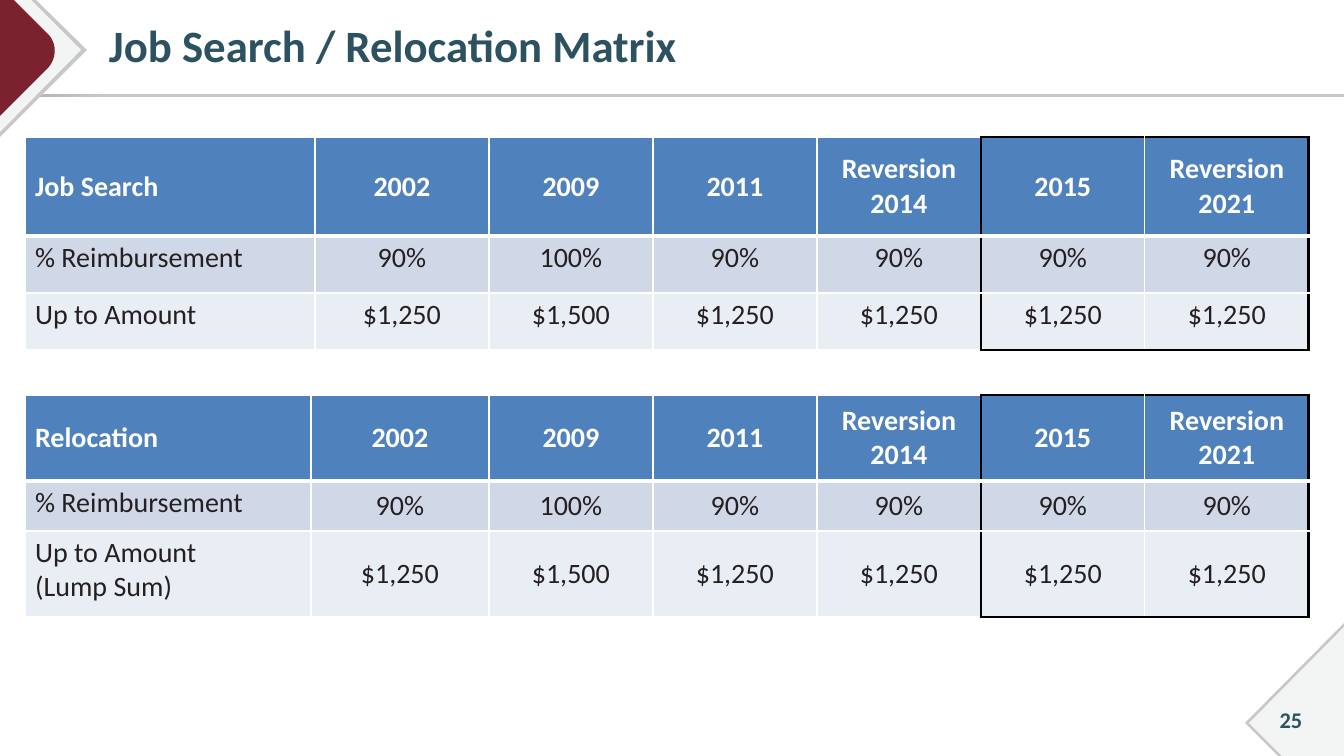
"""Build the job search and relocation matrix slide."""
from lxml import etree
from pptx import Presentation
from pptx.dml.color import RGBColor
from pptx.enum.shapes import MSO_SHAPE
from pptx.enum.text import MSO_ANCHOR, PP_ALIGN
from pptx.oxml.ns import qn
from pptx.util import Pt

PX = 12192000 / 1344
SLIDE_SIZE = (1344, 756)
FONT = "Calibri"
RECTANGLE = MSO_SHAPE.RECTANGLE
TOP, MIDDLE = MSO_ANCHOR.TOP, MSO_ANCHOR.MIDDLE
LEFT, CENTER = PP_ALIGN.LEFT, PP_ALIGN.CENTER

TEAL = RGBColor(0x2C, 0x52, 0x61)
MAROON = RGBColor(0x7A, 0x23, 0x2F)
GRAY = RGBColor(0xC8, 0xC8, 0xC6)
DARK_GRAY = RGBColor(0xAB, 0xAB, 0xA8)
PALE = RGBColor(0xF3, 0xF4, 0xF4)
WHITE = RGBColor(0xFF, 0xFF, 0xFF)
BLACK = RGBColor(0x00, 0x00, 0x00)
INK = RGBColor(0x24, 0x20, 0x21)
ROW_FILLS = (
    RGBColor(0x4F, 0x81, 0xBD),
    RGBColor(0xD0, 0xD8, 0xE8),
    RGBColor(0xE9, 0xED, 0xF4),
)

YEARS = ["2002", "2009", "2011", "Reversion 2014", "2015", "Reversion 2021"]
PERCENTS = ["90%", "100%"] + ["90%"] * 4
AMOUNTS = ["$1,250", "$1,500"] + ["$1,250"] * 4
YEAR_WIDTHS = [164] * 5
FRAME_START = 5
LAST_COLUMN, LAST_ROW = 6, 2


def px(*lengths):
    """Turn pixel lengths into EMU."""
    return [round(length * PX) for length in lengths]


def curve(start, control_1, control_2, end, steps=12):
    """Return points along a cubic curve."""
    points = []
    for step in range(steps + 1):
        t = step / steps
        weights = ((1 - t) ** 3, 3 * t * (1 - t) ** 2, 3 * t * t * (1 - t), t ** 3)
        corners = (start, control_1, control_2, end)
        points.append(tuple(
            sum(weight * corner[axis] for weight, corner in zip(weights, corners))
            for axis in (0, 1)
        ))
    return points


def add_polygon(slide, points, color):
    """Draw a filled outline through pixel points."""
    first, *others = [px(*point) for point in points]
    builder = slide.shapes.build_freeform(*first, scale=1.0)
    builder.add_line_segments(others, close=True)
    shape = builder.convert_to_shape()
    shape.shadow.inherit = False
    shape.fill.solid()
    shape.fill.fore_color.rgb = color
    shape.line.fill.background()


def add_rule(slide, box):
    """Draw the fading line under the title."""
    shape = slide.shapes.add_shape(RECTANGLE, *px(*box))
    shape.shadow.inherit = False
    shape.line.fill.background()
    shape.fill.gradient()
    shape.fill.gradient_angle = 0
    stops = ((0, DARK_GRAY), (0.08, GRAY))
    for stop, (position, color) in zip(shape.fill.gradient_stops, stops):
        stop.position = position
        stop.color.rgb = color


def format_text(paragraph, size, color, bold, alignment):
    """Style every run of a paragraph."""
    paragraph.alignment = alignment
    for run in paragraph.runs:
        run.font.name = FONT
        run.font.size = Pt(size)
        run.font.bold = bold
        run.font.color.rgb = color


def add_label(slide, text, box, size, alignment, inset=10):
    """Add a bold, vertically centred text box."""
    frame = slide.shapes.add_textbox(*px(*box)).text_frame
    frame.word_wrap = True
    frame.vertical_anchor = MIDDLE
    frame.margin_left = px(inset)[0]
    frame.text = text
    paragraph = frame.paragraphs[0]
    paragraph.line_spacing = 0.9
    format_text(paragraph, size, TEAL, True, alignment)


def cell_borders(row, column):
    """Return the colour and width of each side of a cell."""
    thin, thick, frame = (WHITE, 1), (WHITE, 3), (BLACK, 2.25)
    framed = column >= FRAME_START
    borders = {
        "lnL": frame if column == FRAME_START else thin,
        "lnR": frame if column in (FRAME_START - 1, LAST_COLUMN) else thin,
        "lnT": thick if row == 1 else thin,
        "lnB": thick if row == 0 else thin,
    }
    if framed and row == 0:
        borders["lnT"] = frame
    if framed and row == LAST_ROW:
        borders["lnB"] = frame
    return borders


def set_borders(cell, borders):
    """Write the border lines of a cell."""
    properties = cell._tc.get_or_add_tcPr()
    for tag, (color, width) in borders.items():
        line = etree.SubElement(properties, qn("a:" + tag), w=str(Pt(width)))
        fill = etree.SubElement(line, qn("a:solidFill"))
        etree.SubElement(fill, qn("a:srgbClr"), val=str(color))


def add_matrix(slide, top, widths, heights, labels, value_anchor):
    """Add one benefit table with its framed last two columns."""
    box = px(25, top, sum(widths), sum(heights))
    table = slide.shapes.add_table(len(heights), len(widths), *box).table
    table.first_row = table.horz_banding = False
    for column, width in zip(table.columns, px(*widths)):
        column.width = width
    for row, height in zip(table.rows, px(*heights)):
        row.height = height
    for row, values in enumerate((YEARS, PERCENTS, AMOUNTS)):
        header = row == 0
        for column, text in enumerate([labels[row], *values]):
            cell = table.cell(row, column)
            set_borders(cell, cell_borders(row, column))
            cell.fill.solid()
            cell.fill.fore_color.rgb = ROW_FILLS[row]
            body_anchor = value_anchor if column else TOP
            cell.vertical_anchor = MIDDLE if header else body_anchor
            paragraph = cell.text_frame.paragraphs[0]
            paragraph.text = text
            format_text(paragraph, 20, WHITE if header else INK, header,
                        CENTER if column else LEFT)


def main():
    """Build and save the slide."""
    presentation = Presentation()
    presentation.slide_width, presentation.slide_height = px(*SLIDE_SIZE)
    slide = presentation.slides.add_slide(presentation.slide_layouts[6])

    add_rule(slide, (0, 94, 1344, 3))
    add_polygon(slide, [(0, 0), (36, 0), (87, 50), (0, 137)], GRAY)
    add_polygon(slide, [(0, 0), (31, 0), (81, 50), (0, 132)], PALE)
    rounded_tip = curve((48, 34), (57, 43), (57, 58), (48, 68))
    add_polygon(slide, [(0, 0), (14, 0), *rounded_tip, (0, 116)], MAROON)
    add_polygon(slide, [(1344, 623), (1344, 756), (1278, 756), (1245, 723)], GRAY)
    add_polygon(slide, [(1344, 627), (1344, 756), (1282, 756), (1249, 723)], PALE)

    add_label(slide, "Job Search / Relocation Matrix", (89, 5, 1222, 87), 32, LEFT, 20)
    add_label(slide, "25", (1255, 701, 72, 40), 16, CENTER)

    add_matrix(slide, 137, [290, 174, *YEAR_WIDTHS], [99, 57, 57],
               ["Job Search", "% Reimbursement", "Up to Amount"], TOP)
    add_matrix(slide, 395, [286, 178, *YEAR_WIDTHS], [86, 50, 86],
               ["Relocation", "% Reimbursement", "Up to Amount\v(Lump Sum)"], MIDDLE)
    presentation.save("out.pptx")


if __name__ == "__main__":
    main()
